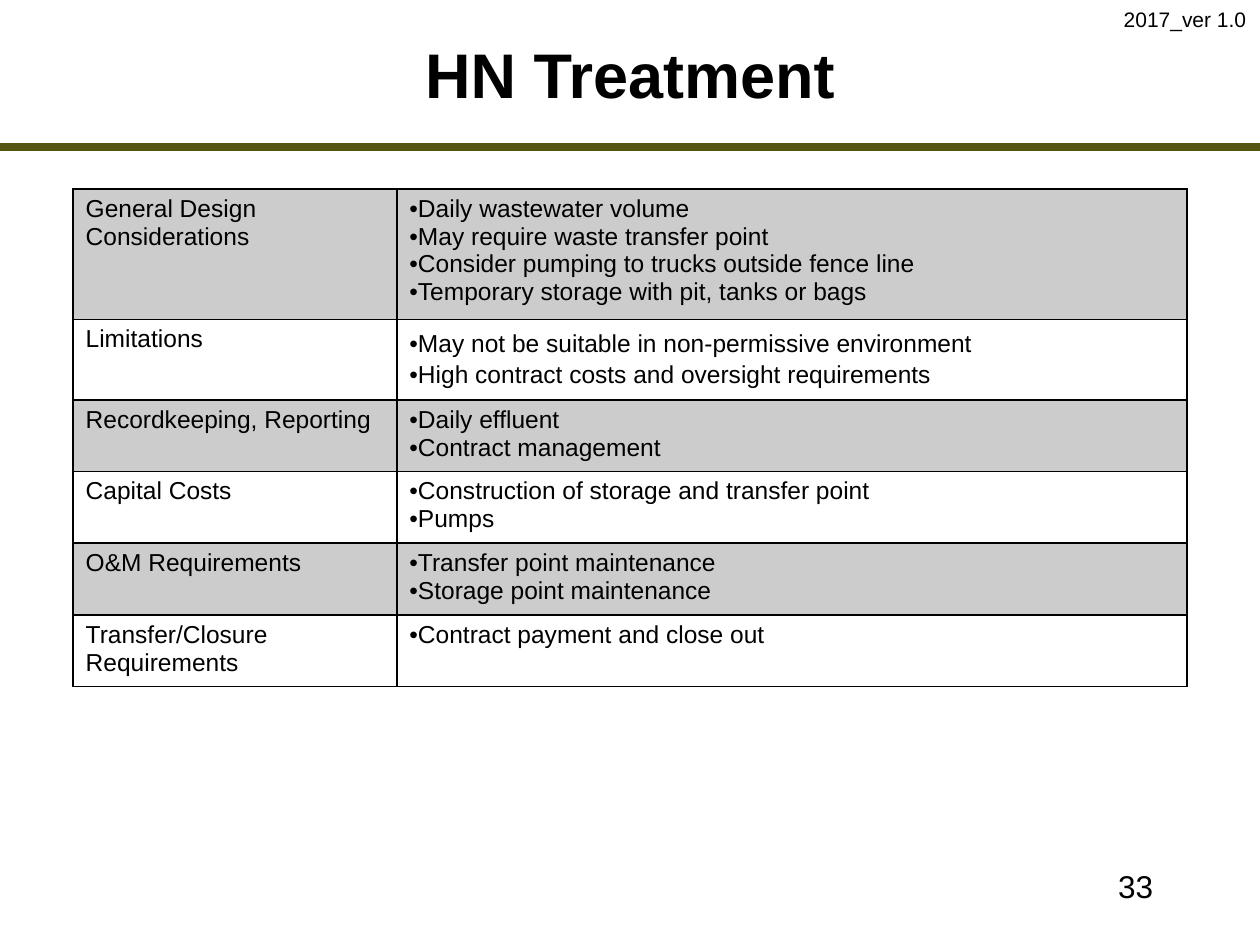
from lxml.etree import SubElement
from pptx import Presentation
from pptx.dml.color import RGBColor
from pptx.enum.shapes import MSO_CONNECTOR
from pptx.enum.text import MSO_ANCHOR, MSO_AUTO_SIZE, PP_ALIGN
from pptx.oxml.ns import qn
from pptx.util import Inches, Pt

BLACK = RGBColor(0x00, 0x00, 0x00)
OLIVE = RGBColor(0x54, 0x56, 0x12)
FONT = "Arial"

COLUMN_WIDTHS = [2.57, 6.27]
ROW_HEIGHTS = [1.03, 0.64, 0.56, 0.57, 0.57, 0.57]
TREATMENT_ROWS = [
    ("General Design Considerations", [
        "Daily wastewater volume",
        "May require waste transfer point",
        "Consider pumping to trucks outside fence line",
        "Temporary storage with pit, tanks or bags",
    ]),
    ("Limitations", [
        "May not be suitable in non-permissive environment",
        "High contract costs and oversight requirements",
    ]),
    ("Recordkeeping, Reporting", ["Daily effluent", "Contract management"]),
    ("Capital Costs", ["Construction of storage and transfer point", "Pumps"]),
    ("O&M Requirements", ["Transfer point maintenance", "Storage point maintenance"]),
    ("Transfer/Closure Requirements", ["Contract payment and close out"]),
]


def style_font(font, size, bold=False):
    font.name = FONT
    font.size = Pt(size)
    font.bold = bold
    font.color.rgb = BLACK


def add_label(page, box, text, size, align=PP_ALIGN.LEFT, bold=False, wrap=True):
    label = page.shapes.add_textbox(*map(Inches, box))
    frame = label.text_frame
    frame.word_wrap = wrap
    frame.text = text
    para = frame.paragraphs[0]
    para.alignment = align
    style_font(para.runs[0].font, size, bold)
    return frame


def add_header(page, left, top, width):
    version = add_label(page, (left + width - 1.18, top, 1.18, 0.3),
                        "2017_ver 1.0", 12, wrap=False)
    version.auto_size = MSO_AUTO_SIZE.SHAPE_TO_FIT_TEXT
    title = add_label(page, (left + 1.17, top + 0.17, 7.66, 0.83),
                      "HN Treatment", 36, PP_ALIGN.CENTER, bold=True)
    title.vertical_anchor = MSO_ANCHOR.MIDDLE
    rule_top = Inches(top + 1.17)
    rule = page.shapes.add_connector(MSO_CONNECTOR.STRAIGHT, Inches(left), rule_top,
                                     Inches(left + width), rule_top)
    rule.line.color.rgb = OLIVE
    rule.line.width = Pt(4.5)
    SubElement(rule._element.spPr, qn("a:effectLst"))


def add_borders(cell):
    properties = cell._tc.get_or_add_tcPr()
    for side in ("a:lnL", "a:lnR", "a:lnT", "a:lnB"):
        border = SubElement(properties, qn(side), w=str(Pt(1)))
        fill = SubElement(border, qn("a:solidFill"))
        SubElement(fill, qn("a:srgbClr"), val=str(BLACK))


def fill_cell(cell, shaded):
    if not shaded:
        cell.fill.background()
        return
    cell.fill.solid()
    cell.fill.fore_color.rgb = BLACK
    color = cell._tc.tcPr.find(qn("a:solidFill")).find(qn("a:srgbClr"))
    SubElement(color, qn("a:alpha"), val="20000")


def add_bullet(para):
    properties = para._p.get_or_add_pPr()
    SubElement(properties, qn("a:buFont"), typeface=FONT)
    SubElement(properties, qn("a:buChar"), char="•")


def write_cell(cell, lines, bulleted, spacing):
    cell.text = "\n".join(lines)
    for para in cell.text_frame.paragraphs:
        if spacing:
            para.line_spacing = spacing
        if bulleted:
            add_bullet(para)
        style_font(para.runs[0].font, 14)


def add_treatment_table(page, left, top, width, height):
    table = page.shapes.add_table(len(TREATMENT_ROWS), len(COLUMN_WIDTHS),
                                  *map(Inches, (left, top, width, height))).table
    table.first_row = False
    table.horz_banding = False
    for column, column_width in zip(table.columns, COLUMN_WIDTHS):
        column.width = Inches(column_width)
    for index, (topic, points) in enumerate(TREATMENT_ROWS):
        table.rows[index].height = Inches(ROW_HEIGHTS[index])
        topic_cell, points_cell = table.rows[index].cells
        write_cell(topic_cell, [topic], False, None)
        write_cell(points_cell, points, True, 1.15 if topic == "Limitations" else None)
        for cell in (topic_cell, points_cell):
            add_borders(cell)
            fill_cell(cell, index % 2 == 0)


def main():
    deck = Presentation()
    deck.slide_width = Inches(10)
    deck.slide_height = Inches(7.5)
    page = deck.slides.add_slide(deck.slide_layouts[6])
    add_header(page, 0, 0, 10)
    add_treatment_table(page, 0.58, 1.5, sum(COLUMN_WIDTHS), sum(ROW_HEIGHTS))
    add_label(page, (7.17, 6.83, 2.08, 0.5), "33", 18, PP_ALIGN.RIGHT)
    deck.save("out.pptx")


if __name__ == "__main__":
    main()
